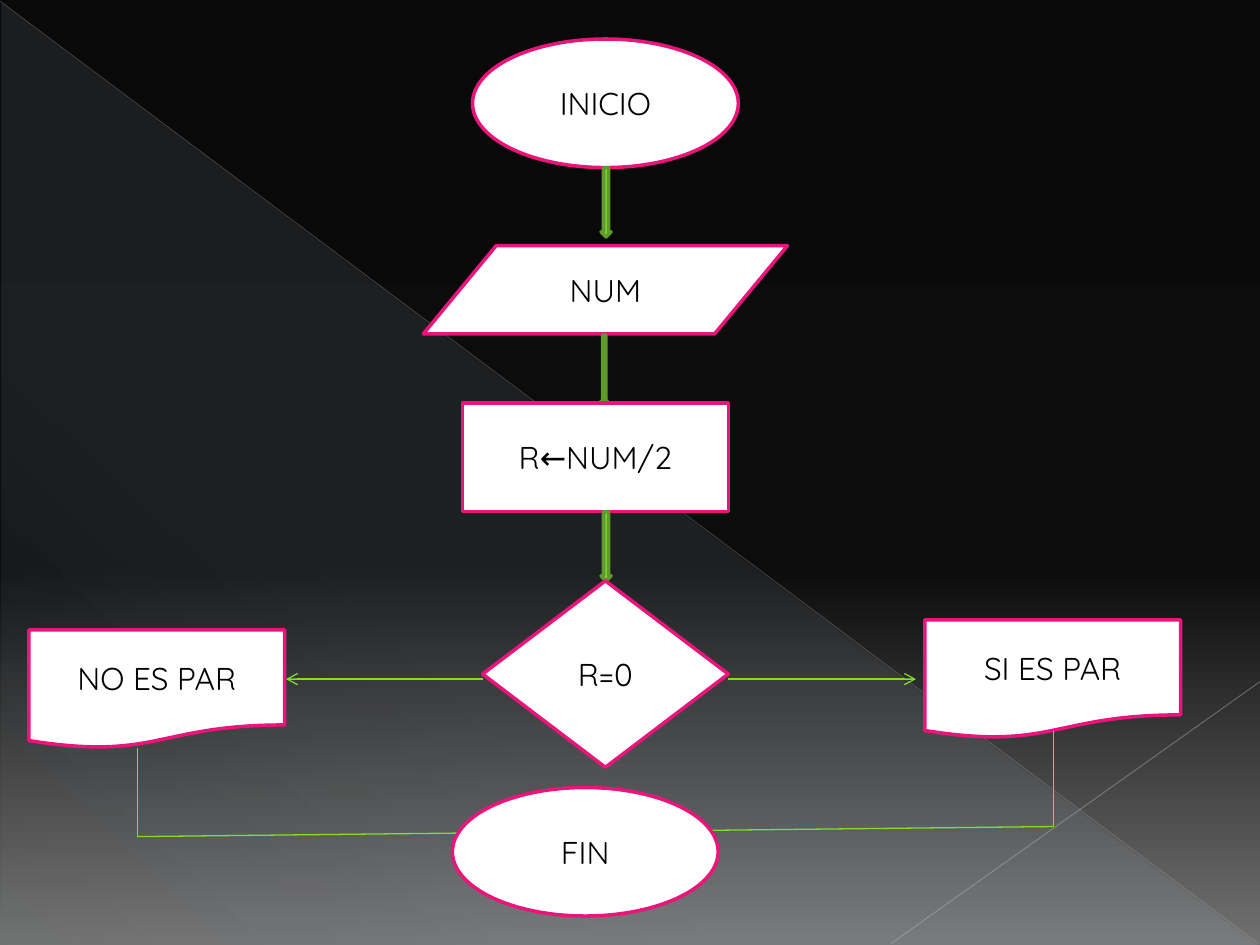
from lxml import etree
from pptx import Presentation
from pptx import util as u
from pptx.dml.color import RGBColor
from pptx.enum import shapes, text
from pptx.oxml.ns import qn

G = shapes.MSO_SHAPE


def rgb(value):
    return RGBColor.from_string(value)


def sub(parent, tag, **attrs):
    return etree.SubElement(parent, qn(tag), attrs)


def box(*lengths):
    return [u.Inches(n) for n in lengths]


class Flowchart:
    """Draw flowchart parts on one slide in a shared style."""

    font, size, ink, paper = "Quicksand", 18, "000000", "FFFFFF"
    border, link = "EA157A", "7EE02C"
    arrow_fill, arrow_border = "7FD13B", "5E9B2C"

    def __init__(self, slide):
        self.s = slide

    def gradient(self, fill, element, stops, angle):
        fill.gradient()
        grad = next(element.iter(qn("a:gradFill")))
        for child in list(grad):
            grad.remove(child)
        gs_list = sub(grad, "a:gsLst")
        for pos, color, alpha in stops:
            gs = sub(gs_list, "a:gs", pos=str(pos * 1000))
            clr = sub(gs, "a:srgbClr", val=color)
            if alpha < 100:
                sub(clr, "a:alpha", val=str(alpha * 1000))
        sub(grad, "a:lin", ang=str(angle * 60000), scaled="0")

    def background(self, stops, angle):
        self.gradient(self.s.background.fill, self.s._element, stops, angle)

    def shape(self, kind, at, fill, border):
        sp = self.s.shapes.add_shape(kind, *box(*at))
        sp.shadow.inherit = False
        sp.fill.solid()
        sp.fill.fore_color.rgb = rgb(fill)
        sp.line.color.rgb = rgb(border)
        sp.line.width = u.Pt(2)
        return sp

    def shade(self, kind, at, stops, angle):
        sp = self.shape(kind, at, self.paper, self.border)
        sp.line.fill.background()
        self.gradient(sp.fill, sp._element.spPr, stops, angle)

    def node(self, kind, at, label):
        sp = self.shape(kind, at, self.paper, self.border)
        tf = sp.text_frame
        tf.word_wrap = True
        tf.vertical_anchor = text.MSO_ANCHOR.MIDDLE
        p = tf.paragraphs[0]
        p.alignment = text.PP_ALIGN.CENTER
        r = p.add_run()
        r.text = label
        r.font.name = self.font
        r.font.size = u.Pt(self.size)
        r.font.color.rgb = rgb(self.ink)

    def down_arrow(self, top, width=0.08):
        self.shape(G.DOWN_ARROW, (4.77, top, width, 0.55), self.arrow_fill, self.arrow_border)

    def line(self, start, end, color=link, width=0.75, alpha=100, arrow=False):
        cxn = self.s.shapes.add_connector(shapes.MSO_CONNECTOR.STRAIGHT, *box(*start, *end))
        cxn.line.color.rgb = rgb(color)
        cxn.line.width = u.Pt(width)
        if alpha < 100:
            clr = next(cxn._element.spPr.iter(qn("a:srgbClr")))
            sub(clr, "a:alpha", val=str(alpha * 1000))
        if arrow:
            sub(cxn.line._get_or_add_ln(), "a:tailEnd", type="arrow")
        sub(cxn._element.spPr, "a:effectLst")


def main():
    prs = Presentation()
    prs.slide_width, prs.slide_height = box(10, 7.5)
    chart = Flowchart(prs.slides.add_slide(prs.slide_layouts[6]))

    chart.background([(0, "090909", 100), (60, "0C0C0C", 100), (100, "707070", 100)], 90)
    glow = [(0, "D6ECFF", 10), (70, "D6ECFF", 8), (100, "D6ECFF", 1)]
    chart.shade(G.RIGHT_TRIANGLE, (0.01, 0.02, 9.98, 7.48), glow, 133)
    chart.line((0, 0.01), (9.99, 7.49), "B4B4B4", 0.39, 35)
    chart.line((10, 5.41), (7.07, 7.49), "BDBDBD", 0.47, 45)

    chart.node(G.OVAL, (3.75, 0.31, 2.11, 1.02), "INICIO")
    chart.down_arrow(1.33)
    chart.node(G.FLOWCHART_DATA, (3.36, 1.95, 2.89, 0.7), "NUM")
    chart.down_arrow(2.66, 0.05)
    chart.node(G.FLOWCHART_PROCESS, (3.67, 3.2, 2.11, 0.86), "R←NUM/2")
    chart.down_arrow(4.06)
    chart.node(G.FLOWCHART_DECISION, (3.83, 4.61, 1.95, 1.48), "R=0")

    chart.line((5.78, 5.39), (7.27, 5.39), arrow=True)
    chart.line((3.83, 5.39), (2.27, 5.39), arrow=True)
    chart.node(G.FLOWCHART_DOCUMENT, (7.34, 4.92, 2.03, 0.94), "SI ES PAR")
    chart.node(G.FLOWCHART_DOCUMENT, (0.23, 5, 2.03, 0.94), "NO ES PAR")

    left, right = (1.09, 6.64), (8.36, 6.56)
    chart.line((1.09, 5.94), left)
    chart.line(left, right)
    chart.line((8.36, 5.8), right)
    chart.node(G.OVAL, (3.59, 6.25, 2.11, 1.02), "FIN")

    prs.save("out.pptx")


if __name__ == "__main__":
    main()
